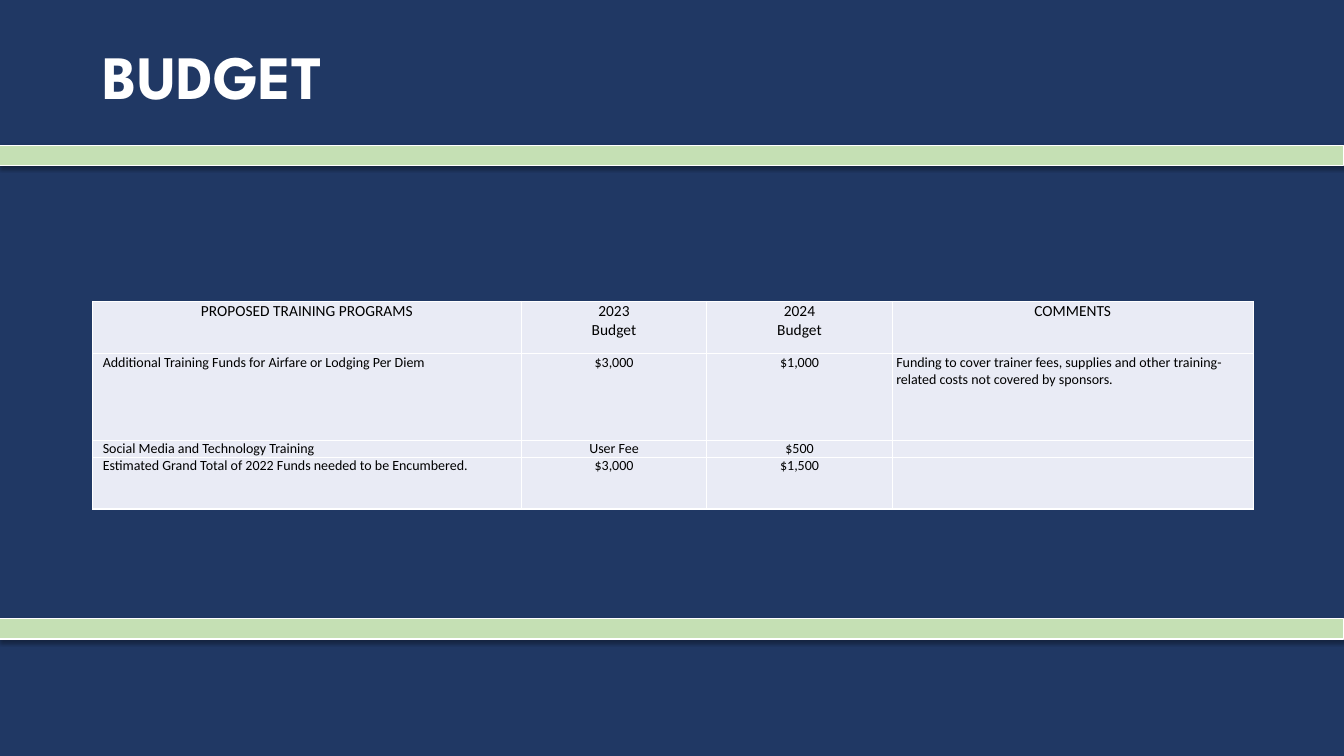
from dataclasses import dataclass

from lxml import etree
from pptx import Presentation, util as u
from pptx.dml.color import RGBColor
from pptx.enum import shapes, text
from pptx.oxml import parse_xml
from pptx.oxml.ns import qn

WIDTH, HEIGHT = u.Inches(13.33), u.Inches(7.5)
NS = 'xmlns:a="http://schemas.openxmlformats.org/drawingml/2006/main"'


@dataclass(frozen=True)
class Theme:
    navy: str = "203864"
    green: str = "C5E0B4"
    white: str = "FFFFFF"
    black: str = "000000"
    cell: str = "E9EBF5"
    title_font: str = "League Spartan"
    body_font: str = "Calibri"
    title_size: float = 44
    header_size: float = 11
    body_size: float = 10
    band_line: float = 0.75
    border: float = 1


@dataclass(frozen=True)
class Box:
    """An area in shares of the slide's width and height."""
    left: float
    top: float
    width: float
    height: float

    def emu(self) -> tuple:
        return (u.Emu(round(self.left * WIDTH)), u.Emu(round(self.top * HEIGHT)),
                u.Emu(round(self.width * WIDTH)), u.Emu(round(self.height * HEIGHT)))


@dataclass(frozen=True)
class BudgetRow:
    height: float  # inches
    cells: tuple[str, str, str, str]


THEME = Theme()
MARGIN = 0.92 / 13.33
CONTENT = 11.5 / 13.33
BANDS = [Box(0, top / 7.5, 1, 0.2 / 7.5) for top in (1.44, 6.14)]
TITLE = Box(MARGIN, 0.06 / 7.5, CONTENT, 1.45 / 7.5)
TABLE = Box(MARGIN, 2.99 / 7.5, CONTENT, 2.08 / 7.5)
COLUMNS = (4.25, 1.84, 1.84, 3.58)
BUDGET = [
    BudgetRow(0.52, ("PROPOSED TRAINING PROGRAMS", "2023\nBudget", "2024\nBudget", "COMMENTS")),
    BudgetRow(0.86, ("Additional Training Funds for Airfare or Lodging Per Diem", "$3,000", "$1,000",
                     "Funding to cover trainer fees, supplies and other training-related costs "
                     "not covered by sponsors.")),
    BudgetRow(0.17, ("Social Media and Technology Training", "User Fee", "$500", "")),
    BudgetRow(0.51, ("Estimated Grand Total of 2022 Funds needed to be Encumbered.",
                     "$3,000", "$1,500", "")),
]


def rgb(colour: str) -> RGBColor:
    return RGBColor.from_string(colour)


def set_font(paragraph, name: str, size: float, colour: str, bold: bool = False) -> None:
    font = paragraph.font
    font.name, font.size, font.bold = name, u.Pt(size), bold
    font.color.rgb = rgb(colour)


def add_band(slide, box: Box) -> None:
    band = slide.shapes.add_shape(shapes.MSO_SHAPE.RECTANGLE, *box.emu())
    band.fill.solid()
    band.fill.fore_color.rgb = rgb(THEME.green)
    band.line.color.rgb = rgb(THEME.white)
    band.line.width = u.Pt(THEME.band_line)
    band.shadow.inherit = False
    band._element.spPr.find(qn("a:effectLst")).append(parse_xml(
        f'<a:outerShdw {NS} blurRad="{u.Pt(3.1)}" dist="{u.Pt(1.8)}" dir="5400000" rotWithShape="0">'
        f'<a:srgbClr val="{THEME.black}"><a:alpha val="35000"/></a:srgbClr></a:outerShdw>'))


def add_title(slide, wording: str) -> None:
    frame = slide.shapes.add_textbox(*TITLE.emu()).text_frame
    frame.word_wrap = True
    frame.vertical_anchor = text.MSO_ANCHOR.MIDDLE
    heading = frame.paragraphs[0]
    heading.text = wording
    heading.line_spacing = 0.9
    set_font(heading, THEME.title_font, THEME.title_size, THEME.white, bold=True)


def add_borders(cell) -> None:
    """Put the four side lines before the fill, as the schema orders them."""
    properties = cell._tc.get_or_add_tcPr()
    for position, side in enumerate(("lnL", "lnR", "lnT", "lnB")):
        properties.insert(position, parse_xml(
            f'<a:{side} {NS} w="{u.Pt(THEME.border)}"><a:solidFill>'
            f'<a:srgbClr val="{THEME.white}"/></a:solidFill></a:{side}>'))


def fill_cell(cell, wording: str, size: float, centred: bool, indent: float) -> None:
    cell.margin_left = cell.margin_right = u.Inches(0.04)
    cell.margin_top = cell.margin_bottom = 0
    cell.fill.solid()
    cell.fill.fore_color.rgb = rgb(THEME.cell)
    add_borders(cell)
    cell.text_frame.text = wording
    for paragraph in cell.text_frame.paragraphs:
        paragraph.alignment = text.PP_ALIGN.CENTER if centred else text.PP_ALIGN.LEFT
        paragraph._p.get_or_add_pPr().set("marL", str(u.Inches(indent)))
        set_font(paragraph, THEME.body_font, size, THEME.black)
        if not wording:  # keeps an empty cell as low as its row
            etree.SubElement(paragraph._p, qn("a:endParaRPr"), sz=str(int(size * 100)))


def add_budget(slide) -> None:
    table = slide.shapes.add_table(len(BUDGET), len(COLUMNS), *TABLE.emu()).table
    for column, width in zip(table.columns, COLUMNS):
        column.width = u.Inches(width)
    for row_index, (row, budget_row) in enumerate(zip(table.rows, BUDGET)):
        row.height = u.Inches(budget_row.height)
        header = row_index == 0
        size = THEME.header_size if header else THEME.body_size
        for column_index, wording in enumerate(budget_row.cells):
            centred = header or column_index in (1, 2)
            indent = 0.06 if column_index == 0 and not header else 0
            fill_cell(table.cell(row_index, column_index), wording, size, centred, indent)


def main() -> None:
    deck = Presentation()
    deck.slide_width, deck.slide_height = WIDTH, HEIGHT
    slide = deck.slides.add_slide(deck.slide_layouts[6])
    slide.background.fill.solid()
    slide.background.fill.fore_color.rgb = rgb(THEME.navy)
    for band in BANDS:
        add_band(slide, band)
    add_title(slide, "BUDGET")
    add_budget(slide)
    deck.save("out.pptx")


if __name__ == "__main__":
    main()
